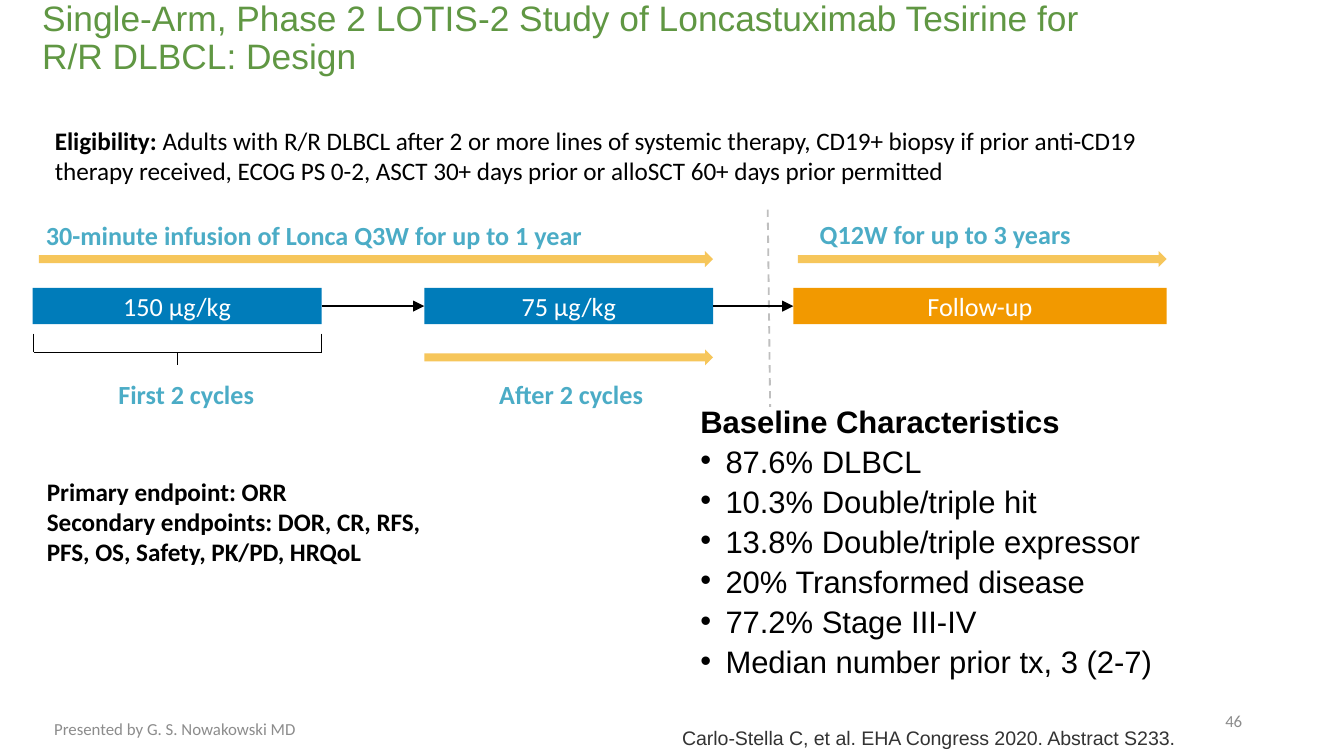
from lxml import etree
from pptx import Presentation
from pptx.dml.color import RGBColor
from pptx.enum import dml, shapes, text
from pptx.oxml import ns
from pptx.util import Pt

GREEN = RGBColor(0x60, 0x97, 0x43)
TEAL = RGBColor(0x4B, 0xAC, 0xC6)
BLUE = RGBColor(0x00, 0x7C, 0xBA)
ORANGE = RGBColor(0xF2, 0x99, 0x00)
YELLOW = RGBColor(0xF6, 0xC6, 0x5B)
GREY = RGBColor(0x8C, 0x8C, 0x8C)
LIGHT = RGBColor(0xBF, 0xBF, 0xBF)
DARK = RGBColor(0x33, 0x33, 0x33)
BLACK = RGBColor(0, 0, 0)
WHITE = RGBColor(255, 255, 255)
LEFT, CENTER, RIGHT = text.PP_ALIGN.LEFT, text.PP_ALIGN.CENTER, text.PP_ALIGN.RIGHT
TOP, MIDDLE, BOTTOM = text.MSO_ANCHOR.TOP, text.MSO_ANCHOR.MIDDLE, text.MSO_ANCHOR.BOTTOM
INSETS = (7.2, 3.6, 7.2, 3.6)
FLUSH = (0, 0, 0, 0)


class Deck:
    heading_font, body_font = "Arial", "Calibri"

    def __init__(self, width, height):
        self.prs = Presentation()
        self.prs.slide_width, self.prs.slide_height = Pt(width), Pt(height)
        self.s = self.prs.slides.add_slide(self.prs.slide_layouts[1])

    def place(self, sp, box):
        sp.left, sp.top, sp.width, sp.height = (Pt(v) for v in box)

    def frame(self, sp, anchor, insets):
        tf = sp.text_frame
        tf.word_wrap = True
        tf.auto_size = text.MSO_AUTO_SIZE.NONE
        tf.vertical_anchor = anchor
        tf.margin_left, tf.margin_top, tf.margin_right, tf.margin_bottom = (Pt(v) for v in insets)
        return tf

    def style(self, runs, size, color, bold=False, font=body_font):
        for r in runs:
            r.font.size, r.font.name, r.font.bold = Pt(size), font, bold
            r.font.color.rgb = color

    def title(self, box, words, size, color):
        sp = self.s.shapes.title
        self.place(sp, box)
        tf = self.frame(sp, BOTTOM, (0, 0, 0, 18))
        tf.text = words
        p = tf.paragraphs[0]
        p.alignment, p.line_spacing = LEFT, 0.9
        self.style(p.runs, size, color, font=self.heading_font)

    def bullets(self, box, heading, items, size, indent):
        sp = self.s.placeholders[1]
        self.place(sp, box)
        tf = self.frame(sp, TOP, INSETS)
        tf.text = "\n".join([heading] + items)
        for i, p in enumerate(tf.paragraphs):
            pPr = p._p.get_or_add_pPr()
            hang = Pt(indent) if i else 0
            pPr.set("marL", str(hang))
            pPr.set("indent", str(-hang))
            if i:
                etree.SubElement(pPr, ns.qn("a:buFont"), typeface="Arial")
                etree.SubElement(pPr, ns.qn("a:buChar"), char="•")
            else:
                etree.SubElement(pPr, ns.qn("a:buNone"))
            p.line_spacing = 0.7
            p.space_before = Pt(7.5 if i else 0)
            self.style(p.runs, size, BLACK, i == 0, self.heading_font)

    def label(self, box, words, size, color, bold=False, align=LEFT,
              anchor=TOP, insets=INSETS, font=body_font, lead=""):
        sp = self.s.shapes.add_textbox(*(Pt(v) for v in box))
        tf = self.frame(sp, anchor, insets)
        tf.text = words
        for p in tf.paragraphs:
            p.alignment = align
            self.style(p.runs, size, color, bold, font)
        if lead:
            p = tf.paragraphs[0]
            p.runs[0].text = lead
            r = p.add_run()
            r.text = words
            self.style(p.runs[:1], size, color, True, font)
            self.style([r], size, color, bold, font)
        return tf

    def shape(self, kind, box, fill):
        sp = self.s.shapes.add_shape(kind, *(Pt(v) for v in box))
        sp.shadow.inherit = False
        sp.fill.solid()
        sp.fill.fore_color.rgb = fill
        sp.line.fill.background()
        return sp

    def stage(self, box, words, fill):
        sp = self.shape(shapes.MSO_SHAPE.RECTANGLE, box, fill)
        tf = self.frame(sp, MIDDLE, INSETS)
        tf.text = words
        p = tf.paragraphs[0]
        p.alignment = CENTER
        self.style(p.runs, 14, WHITE)

    def span(self, x, y, width):
        self.shape(shapes.MSO_SHAPE.RIGHT_ARROW, (x, y, width, 8.6), YELLOW)

    def line(self, x1, y1, x2, y2, color=BLACK, width=0.5, dash=False, arrow=False):
        c = self.s.shapes.add_connector(
            shapes.MSO_CONNECTOR.STRAIGHT, Pt(x1), Pt(y1), Pt(x2), Pt(y2))
        c.line.color.rgb, c.line.width = color, Pt(width)
        if dash:
            c.line.dash_style = dml.MSO_LINE.DASH
        if arrow:
            etree.SubElement(c.line._get_or_add_ln(), ns.qn("a:tailEnd"), type="triangle")
        etree.SubElement(c._element.spPr, ns.qn("a:effectLst"))


def main():
    deck = Deck(720, 405)
    deck.title((22.5, 13.5, 592.5, 46),
               "Single-Arm, Phase 2 LOTIS-2 Study of Loncastuximab Tesirine for R/R DLBCL: Design",
               18.9, GREEN)
    deck.label((183, 368.5, 447, 33), "Carlo-Stella C, et al. EHA Congress 2020. Abstract S233.",
               10.5, DARK, align=RIGHT, anchor=BOTTOM, insets=FLUSH,
               font=deck.heading_font).paragraphs[0].line_spacing = Pt(15.8)
    deck.label((508.5, 375.3, 162, 21.6), "46", 9, GREY, align=RIGHT, anchor=MIDDLE,
               insets=(5, 2.9, 5, 2.9))

    deck.line(411.3, 112.3, 412.6, 218, LIGHT, 1, dash=True)
    first, second, follow = (17.5, 154.8), (227.3, 154.8), (425, 200)
    for (x, width), words, fill in ((first, "150 µg/kg", BLUE), (second, "75 µg/kg", BLUE),
                                    (follow, "Follow-up", ORANGE)):
        deck.stage((x, 154.3, width, 19.4), words, fill)
    for (x, width), (end, _) in ((first, second), (second, follow)):
        deck.line(x + width, 164, end, 164, width=0.75, arrow=True)
    for x, y, right in ((20.8, 134.5, 382), (227.3, 187.2, 382), (427.5, 134.5, 625)):
        deck.span(x, y, right - x)

    left, right, base = 18, 172.3, 188.8
    middle = (left + right) / 2
    for x in (left, right):
        deck.line(x, 178.8, x, base)
    deck.line(left, base, right, base)
    deck.line(middle, base, middle, 195.8)

    for box, words, align in (
            ((17.5, 114, 347, 24.2), "30-minute infusion of Lonca Q3W for up to 1 year", LEFT),
            ((432, 113.3, 186, 24.2), "Q12W for up to 3 years", LEFT),
            ((56.3, 199.3, 119, 24.2), "First 2 cycles", LEFT),
            ((227.5, 199.3, 157, 24.2), "After 2 cycles", CENTER)):
        deck.label(box, words, 14, TEAL, True, align)

    deck.label((22.3, 63.5, 605, 40),
               "Adults with R/R DLBCL after 2 or more lines of systemic therapy, CD19+ biopsy if "
               "prior anti-CD19 therapy received, ECOG PS 0-2, ASCT 30+ days prior or alloSCT "
               "60+ days prior permitted", 13.5, BLACK, lead="Eligibility: ")
    deck.label((18, 251.5, 225.5, 56),
               "Primary endpoint: ORR\nSecondary endpoints: DOR, CR, RFS, PFS, OS, Safety, "
               "PK/PD, HRQoL", 13.5, BLACK, True)
    deck.bullets((368, 217.5, 275, 164), "Baseline Characteristics",
                 ["87.6% DLBCL", "10.3% Double/triple hit", "13.8% Double/triple expressor",
                  "20% Transformed disease", "77.2% Stage III-IV",
                  "Median number prior tx, 3 (2-7)"], 16.6, 13.5)
    deck.label((29, 384, 284.5, 12), "Presented by G. S. Nowakowski MD", 9, GREY,
               anchor=BOTTOM, insets=FLUSH)
    deck.prs.save("out.pptx")


if __name__ == "__main__":
    main()
